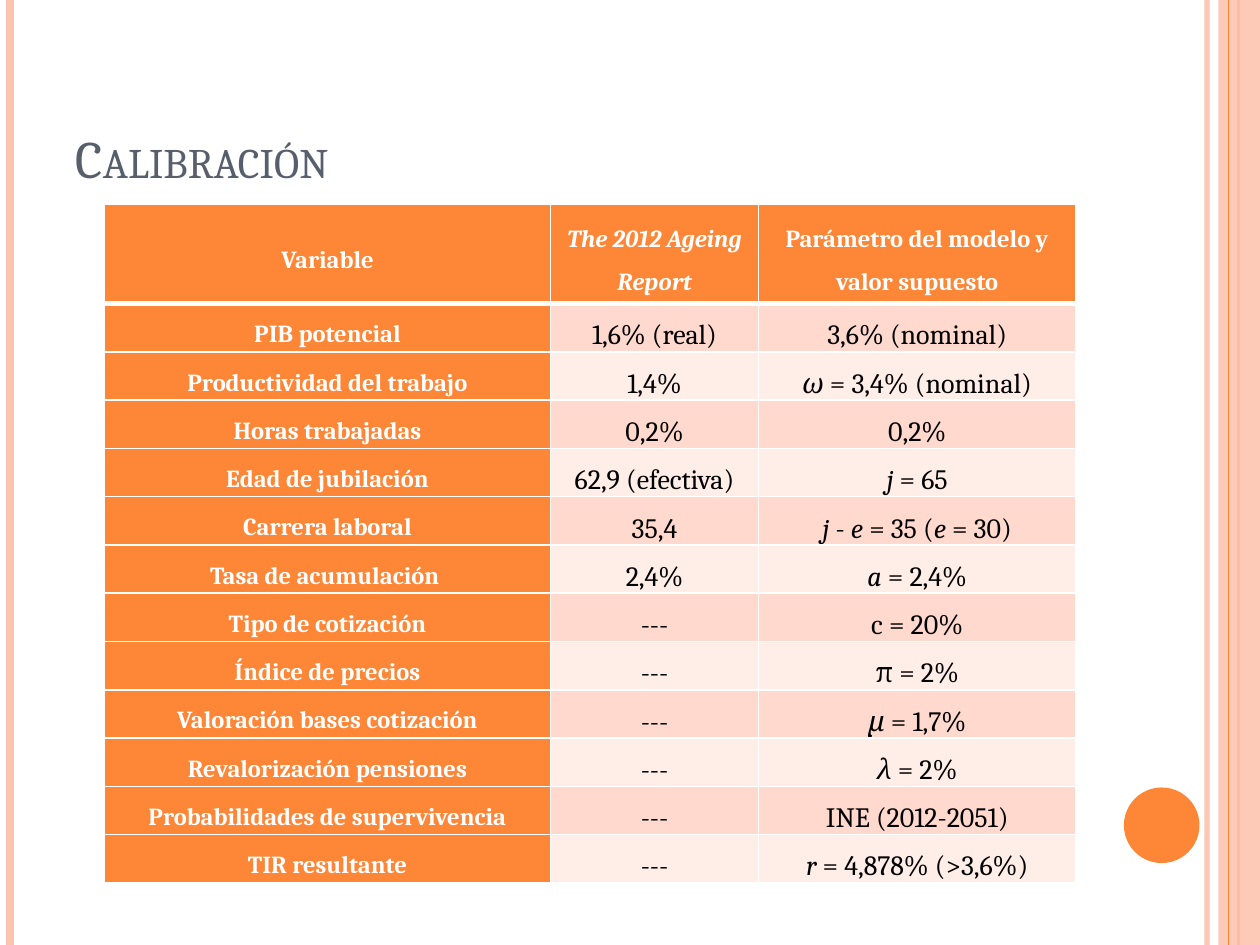
from dataclasses import dataclass

from lxml import etree
from pptx import Presentation
from pptx.dml.color import RGBColor
from pptx.enum.shapes import MSO_CONNECTOR, MSO_SHAPE
from pptx.enum.text import MSO_ANCHOR, PP_ALIGN
from pptx.oxml.ns import qn
from pptx.slide import Slide
from pptx.table import _Cell
from pptx.util import Inches, Pt

STRAIGHT = MSO_CONNECTOR.STRAIGHT
RECTANGLE, OVAL = MSO_SHAPE.RECTANGLE, MSO_SHAPE.OVAL
MIDDLE, BOTTOM = MSO_ANCHOR.MIDDLE, MSO_ANCHOR.BOTTOM
LEFT, CENTER = PP_ALIGN.LEFT, PP_ALIGN.CENTER

FONT = "Cambria"
COLORS = {
    "orange": "FE8637",
    "peach": "FEC3AE",
    "band_dark": "FFD9CE",
    "band_light": "FFEDE8",
    "title": "575F6D",
    "white": "FFFFFF",
    "black": "000000",
}
SLIDE_W, SLIDE_H = 10, 7.5
COLUMN_WIDTHS = (3.54, 1.65, 2.52)
HEADER_H, ROW_H = 0.79, 0.38


@dataclass(frozen=True)
class Stripe:
    x: float
    color: str
    width: float
    opacity: int = 100


@dataclass(frozen=True)
class Block:
    kind: int
    left: float
    top: float
    width: float
    height: float
    color: str
    opacity: int = 100


@dataclass(frozen=True)
class Row:
    variable: str
    report: str
    model: str


DECORATION = (
    Stripe(9.58, "peach", 3, 93),
    Stripe(0.08, "peach", 4.5),
    Stripe(9.83, "orange", 1.5),
    Block(RECTANGLE, 9.67, 0, 0.33, SLIDE_H, "peach", 87),
    Stripe(9.75, "orange", 0.75),
    Block(OVAL, 8.92, 6.25, 0.6, 0.6, "orange"),
)

# Text between asterisks is italic.
ROWS = (
    Row("Variable", "*The 2012 Ageing Report*", "Parámetro del modelo y valor supuesto"),
    Row("PIB potencial", "1,6% (real)", "3,6% (nominal)"),
    Row("Productividad del trabajo", "1,4%", "*ω* = 3,4% (nominal)"),
    Row("Horas trabajadas", "0,2%", "0,2%"),
    Row("Edad de jubilación", "62,9 (efectiva)", "*j *= 65"),
    Row("Carrera laboral", "35,4", "*j *- *e *= 35 (*e *= 30)"),
    Row("Tasa de acumulación ", "2,4%", "*a* = 2,4%"),
    Row("Tipo de cotización", "---", "c = 20%"),
    Row("Índice de precios", "---", "π = 2%"),
    Row("Valoración bases cotización", "---", "*μ *= 1,7%"),
    Row("Revalorización pensiones", "---", "*λ *= 2%"),
    Row("Probabilidades de supervivencia", "---", "INE (2012-2051)"),
    Row("TIR resultante", "---", "*r *= 4,878% (>3,6%)"),
)


def rgb(name: str) -> RGBColor:
    return RGBColor.from_string(COLORS[name])


def set_opacity(element: etree._Element, percent: int) -> None:
    if percent < 100:
        color = element.find(".//" + qn("a:srgbClr"))
        etree.SubElement(color, qn("a:alpha"), val=str(percent * 1000))


def add_stripe(s: Slide, stripe: Stripe) -> None:
    x = Inches(stripe.x)
    line = s.shapes.add_connector(STRAIGHT, x, 0, x, Inches(SLIDE_H))
    line.line.color.rgb = rgb(stripe.color)
    line.line.width = Pt(stripe.width)
    sp_pr = line._element.spPr
    set_opacity(sp_pr, stripe.opacity)
    etree.SubElement(sp_pr, qn("a:effectLst"))


def add_block(s: Slide, block: Block) -> None:
    box = (block.left, block.top, block.width, block.height)
    sp = s.shapes.add_shape(block.kind, *map(Inches, box))
    sp.shadow.inherit = False
    sp.fill.solid()
    sp.fill.fore_color.rgb = rgb(block.color)
    sp.line.fill.background()
    set_opacity(sp._element.spPr, block.opacity)


def set_title(s: Slide, text: str) -> None:
    title = s.shapes.title
    title.left, title.top = Inches(0.5), Inches(0.3)
    title.width, title.height = Inches(8.17), Inches(1.25)
    tf = title.text_frame
    tf.vertical_anchor = BOTTOM
    p = tf.paragraphs[0]
    p.alignment = LEFT
    r = p.add_run()
    r.text = text
    r.font.name, r.font.size = FONT, Pt(30)
    r.font.color.rgb = rgb("title")
    r._r.get_or_add_rPr().set("cap", "small")


def set_borders(cell: _Cell, top: float, bottom: float) -> None:
    tc_pr = cell._tc.get_or_add_tcPr()
    widths = (("a:lnL", 1), ("a:lnR", 1), ("a:lnT", top), ("a:lnB", bottom))
    for i, (tag, width) in enumerate(widths):
        ln = etree.Element(qn(tag), w=str(Pt(width)))
        fill = etree.SubElement(ln, qn("a:solidFill"))
        etree.SubElement(fill, qn("a:srgbClr"), val=COLORS["white"])
        tc_pr.insert(i, ln)


def fill_cell(cell: _Cell, text: str, fill: str, heading: bool) -> None:
    cell.fill.solid()
    cell.fill.fore_color.rgb = rgb(fill)
    cell.vertical_anchor = MIDDLE
    cell.margin_left = cell.margin_right = Inches(0.07)
    cell.margin_top = cell.margin_bottom = 0
    p = cell.text_frame.paragraphs[0]
    p.alignment, p.line_spacing = CENTER, 1.5
    for i, part in enumerate(text.split("*")):
        if part:
            r = p.add_run()
            r.text = part
            r.font.name, r.font.size = FONT, Pt(14 if heading else 16)
            r.font.bold, r.font.italic = heading, i % 2 == 1
            r.font.color.rgb = rgb("white" if heading else "black")


def add_calibration_table(s: Slide) -> None:
    height = HEADER_H + ROW_H * (len(ROWS) - 1)
    box = (0.83, 1.62, sum(COLUMN_WIDTHS), height)
    frame = s.shapes.add_table(len(ROWS), len(COLUMN_WIDTHS), *map(Inches, box))
    table = frame.table
    for column, width in zip(table.columns, COLUMN_WIDTHS):
        column.width = Inches(width)
    for i, row in enumerate(ROWS):
        table.rows[i].height = Inches(ROW_H if i else HEADER_H)
        band = "band_dark" if i % 2 else "band_light"
        for j, text in enumerate((row.variable, row.report, row.model)):
            heading = i == 0 or j == 0
            cell = table.cell(i, j)
            fill_cell(cell, text, "orange" if heading else band, heading)
            set_borders(cell, 3 if i == 1 else 1, 3 if i == 0 else 1)


def main() -> None:
    prs = Presentation()
    prs.slide_width, prs.slide_height = Inches(SLIDE_W), Inches(SLIDE_H)
    s = prs.slides.add_slide(prs.slide_layouts[5])
    for item in DECORATION:
        if isinstance(item, Stripe):
            add_stripe(s, item)
        else:
            add_block(s, item)
    set_title(s, "Calibración")
    add_calibration_table(s)
    prs.save("out.pptx")


if __name__ == "__main__":
    main()
